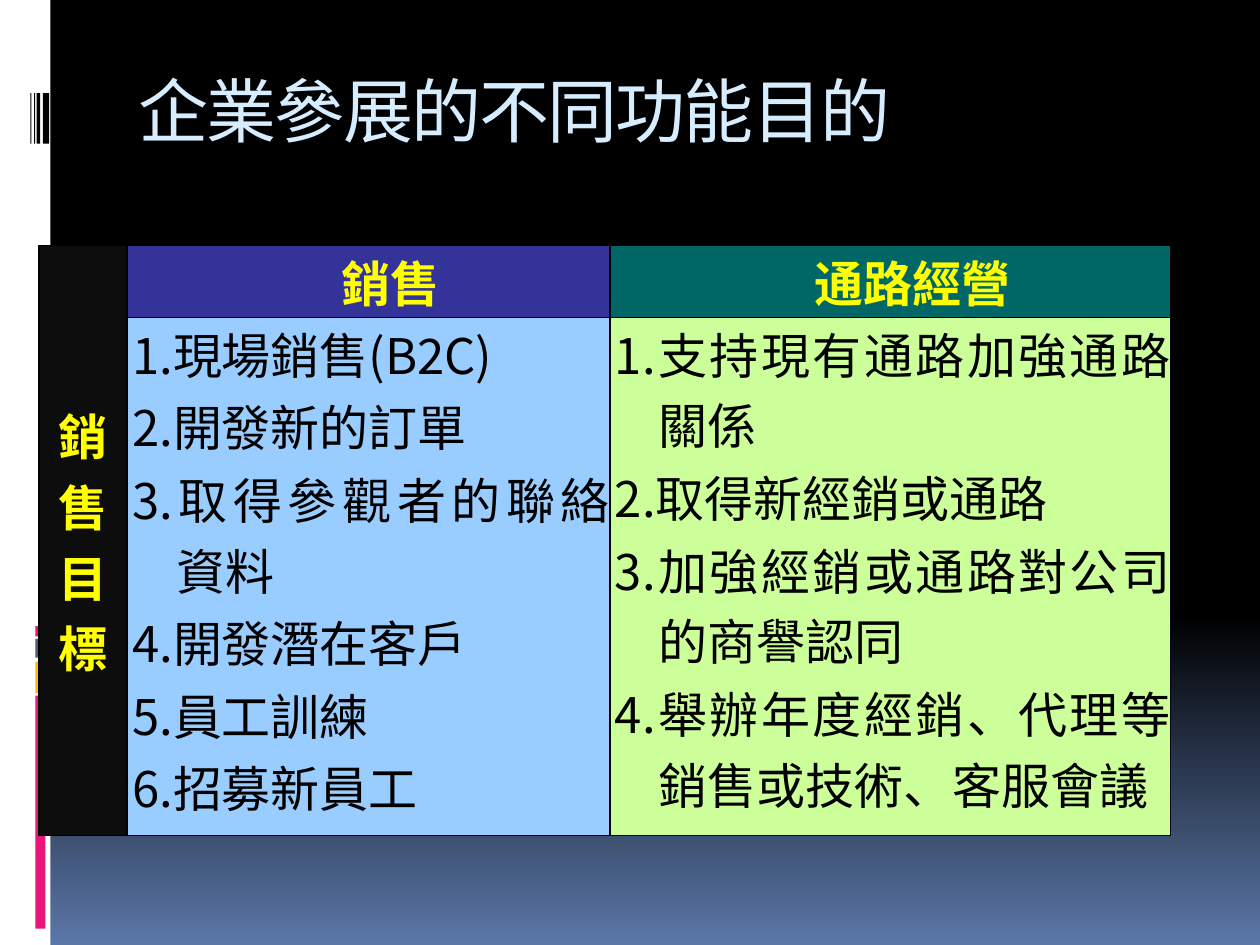
from dataclasses import dataclass

from lxml import etree
from pptx import Presentation
from pptx.dml.color import RGBColor
from pptx.enum.shapes import MSO_SHAPE
from pptx.enum.text import MSO_ANCHOR, MSO_AUTO_SIZE, PP_ALIGN
from pptx.oxml.ns import qn
from pptx.slide import Slide
from pptx.table import Table, _Cell
from pptx.text.text import _Paragraph
from pptx.util import Inches, Pt

RECTANGLE = MSO_SHAPE.RECTANGLE
TOP, MIDDLE = MSO_ANCHOR.TOP, MSO_ANCHOR.MIDDLE
LEFT, CENTER, JUSTIFY = PP_ALIGN.LEFT, PP_ALIGN.CENTER, PP_ALIGN.JUSTIFY


@dataclass(frozen=True)
class Theme:
    black: str = "000000"
    white: str = "FFFFFF"
    dusk: str = "5B77A8"
    pink: str = "EA157A"
    amber: str = "FEB80A"
    slate: str = "4E5B6F"
    title: str = "D6ECFF"
    heading: str = "FFFF00"
    row_label: str = "0D0D0D"
    latin_font: str = "Courier New"
    font: str = "Noto Sans CJK SC"
    title_size: int = 40
    table_size: int = 28


@dataclass(frozen=True)
class Bar:
    left: float
    top: float
    width: float
    height: float
    color: str


@dataclass(frozen=True)
class Goal:
    heading: str
    heading_fill: str
    items: tuple[str, ...]
    items_fill: str


THEME = Theme()

BARS = [
    Bar(0, 0, 0.4, 7.5, THEME.white),
    *(Bar(0.28, top, 0.08, height, color) for top, height, color in (
        (5.52, 1.85, THEME.pink),
        (5.25, 0.25, THEME.amber),
        (5.07, 0.15, THEME.slate),
        (4.97, 0.08, THEME.pink),
    )),
    *(Bar(left, 0.74, width, 0.4, THEME.black) for left, width in (
        (0.34, 0.05), (0.29, 0.03), (0.27, 0.01), (0.24, 0.01),
    )),
]

GOALS = [
    Goal("銷售", "333399", (
        "1.現場銷售(B2C)",
        "2.開發新的訂單",
        "3.取得參觀者的聯絡資料",
        "4.開發潛在客戶",
        "5.員工訓練",
        "6.招募新員工",
    ), "99CCFF"),
    Goal("通路經營", "006666", (
        "1.支持現有通路加強通路關係",
        "2.取得新經銷或通路",
        "3.加強經銷或通路對公司的商譽認同",
        "4.舉辦年度經銷、代理等銷售或技術、客服會議",
    ), "CCFF99"),
]

COLUMN_WIDTHS = (0.7, 3.83, 4.45)
ROW_HEIGHTS = (0.57, 4.11)


def rgb(color: str) -> RGBColor:
    return RGBColor.from_string(color)


def paint_background(slide: Slide) -> None:
    fill = slide.background.fill
    fill.gradient()
    fill.gradient_angle = 270
    stops = ((0.65, THEME.black), (1, THEME.dusk))
    for stop, (position, color) in zip(fill.gradient_stops, stops):
        stop.position = position
        stop.color.rgb = rgb(color)


def draw_bar(slide: Slide, bar: Bar) -> None:
    shape = slide.shapes.add_shape(
        RECTANGLE, Inches(bar.left), Inches(bar.top), Inches(bar.width), Inches(bar.height))
    shape.shadow.inherit = False
    shape.fill.solid()
    shape.fill.fore_color.rgb = rgb(bar.color)
    shape.line.fill.background()


def format_runs(paragraph: _Paragraph, latin_font: str, size: int, color: str,
                bold: bool = False) -> None:
    for run in paragraph.runs:
        run.font.name = latin_font
        run.font.size = Pt(size)
        run.font.bold = bold
        run.font.color.rgb = rgb(color)
        east_asian = etree.SubElement(run.font._element, qn("a:ea"))
        east_asian.set("typeface", THEME.font)


def indent(paragraph: _Paragraph, margin: float, first_line: float) -> None:
    properties = paragraph._p.get_or_add_pPr()
    properties.set("marL", str(Inches(margin)))
    properties.set("indent", str(Inches(first_line)))


def write_title(slide: Slide, text: str) -> None:
    title = slide.shapes.title
    title.left, title.top, title.width, title.height = map(Inches, (1, 0.56, 8.5, 1))
    frame = title.text_frame
    frame.text = text
    frame.auto_size = MSO_AUTO_SIZE.NONE
    frame.vertical_anchor = TOP
    paragraph = frame.paragraphs[0]
    paragraph.alignment = LEFT
    paragraph.line_spacing = 0.9
    format_runs(paragraph, THEME.latin_font, THEME.title_size, THEME.title)
    for run in paragraph.runs:
        run.font._element.set("spc", "-100")


def add_borders(cell: _Cell) -> None:
    """Draw thin black lines on all four sides, placed before the cell's fill."""
    properties = cell._tc.get_or_add_tcPr()
    for index, side in enumerate(("lnL", "lnR", "lnT", "lnB")):
        line = etree.Element(qn(f"a:{side}"), w=str(Pt(1)))
        solid = etree.SubElement(line, qn("a:solidFill"))
        etree.SubElement(solid, qn("a:srgbClr"), val=THEME.black)
        properties.insert(index, line)


def prepare_cell(cell: _Cell, fill: str) -> None:
    cell.margin_left = cell.margin_right = cell.margin_top = cell.margin_bottom = 0
    cell.fill.solid()
    cell.fill.fore_color.rgb = rgb(fill)
    add_borders(cell)


def write_heading(cell: _Cell, text: str, fill: str) -> _Paragraph:
    prepare_cell(cell, fill)
    cell.text_frame.text = text
    paragraph = cell.text_frame.paragraphs[0]
    paragraph.alignment = CENTER
    format_runs(paragraph, THEME.font, THEME.table_size, THEME.heading, bold=True)
    return paragraph


def write_goal(table: Table, column: int, goal: Goal) -> None:
    heading = write_heading(table.cell(0, column), goal.heading, goal.heading_fill)
    heading.space_before = Pt(1.5)
    indent(heading, 0.04, 0.31)

    cell = table.cell(1, column)
    prepare_cell(cell, goal.items_fill)
    cell.text_frame.text = "\n".join(goal.items)
    for paragraph in cell.text_frame.paragraphs:
        paragraph.alignment = JUSTIFY
        paragraph.space_before = Pt(1)
        indent(paragraph, 0.39, -0.35)
        format_runs(paragraph, THEME.font, THEME.table_size, THEME.black)


def add_goal_table(slide: Slide) -> None:
    table = slide.shapes.add_table(
        len(ROW_HEIGHTS), len(COLUMN_WIDTHS), Inches(0.31), Inches(1.95),
        Inches(sum(COLUMN_WIDTHS)), Inches(sum(ROW_HEIGHTS))).table
    table.first_row = table.horz_banding = False
    for column, width in zip(table.columns, COLUMN_WIDTHS):
        column.width = Inches(width)
    for row, height in zip(table.rows, ROW_HEIGHTS):
        row.height = Inches(height)

    label = table.cell(0, 0)
    label.merge(table.cell(1, 0))
    write_heading(label, "銷售目標", THEME.row_label)
    label.vertical_anchor = MIDDLE
    prepare_cell(table.cell(1, 0), THEME.row_label)
    for column, goal in enumerate(GOALS, start=1):
        write_goal(table, column, goal)


def main() -> None:
    presentation = Presentation()
    presentation.slide_width, presentation.slide_height = Inches(10), Inches(7.5)
    slide = presentation.slides.add_slide(presentation.slide_layouts[5])
    paint_background(slide)
    for bar in BARS:
        draw_bar(slide, bar)
    write_title(slide, "企業參展的不同功能目的")
    add_goal_table(slide)
    presentation.save("out.pptx")


if __name__ == "__main__":
    main()
